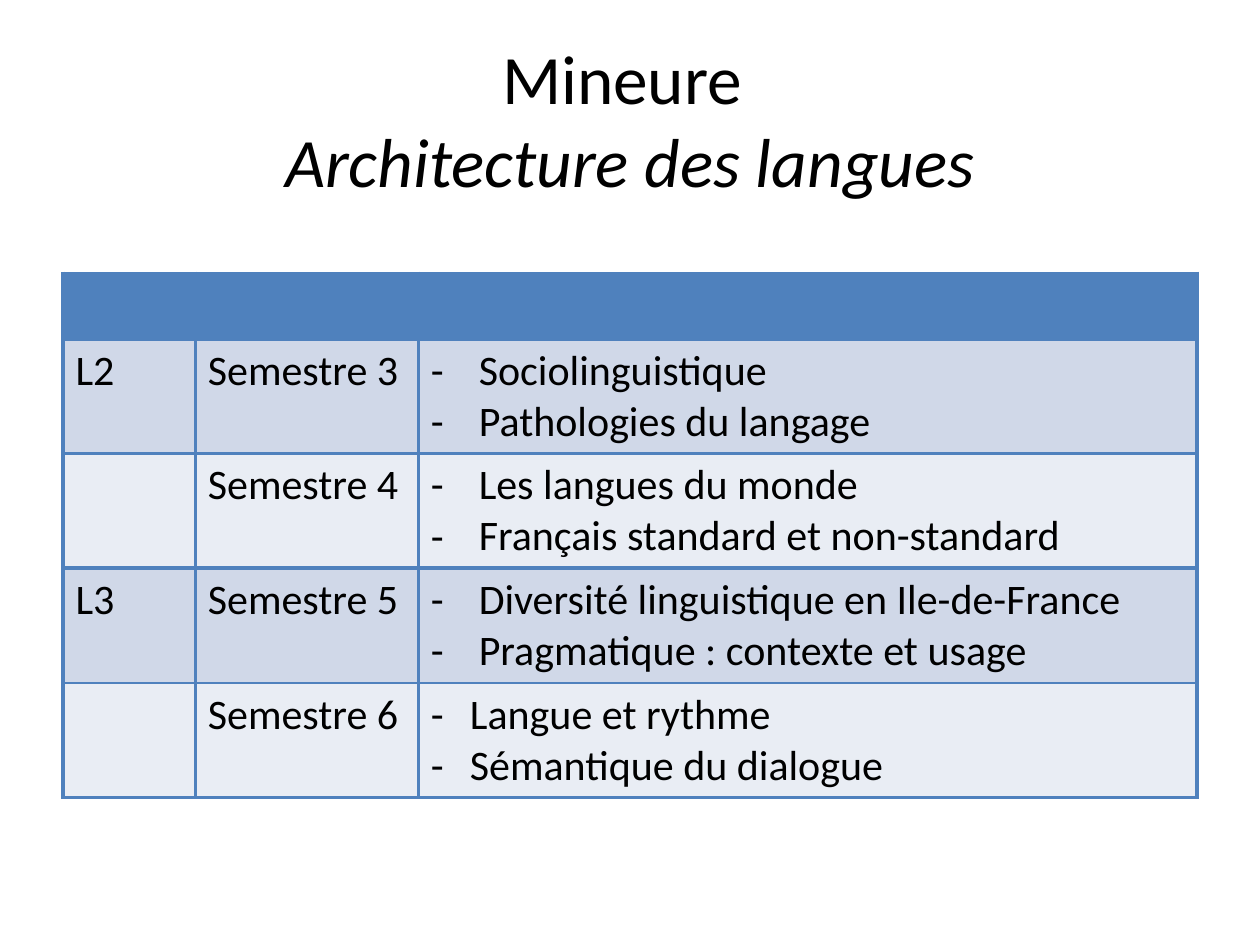
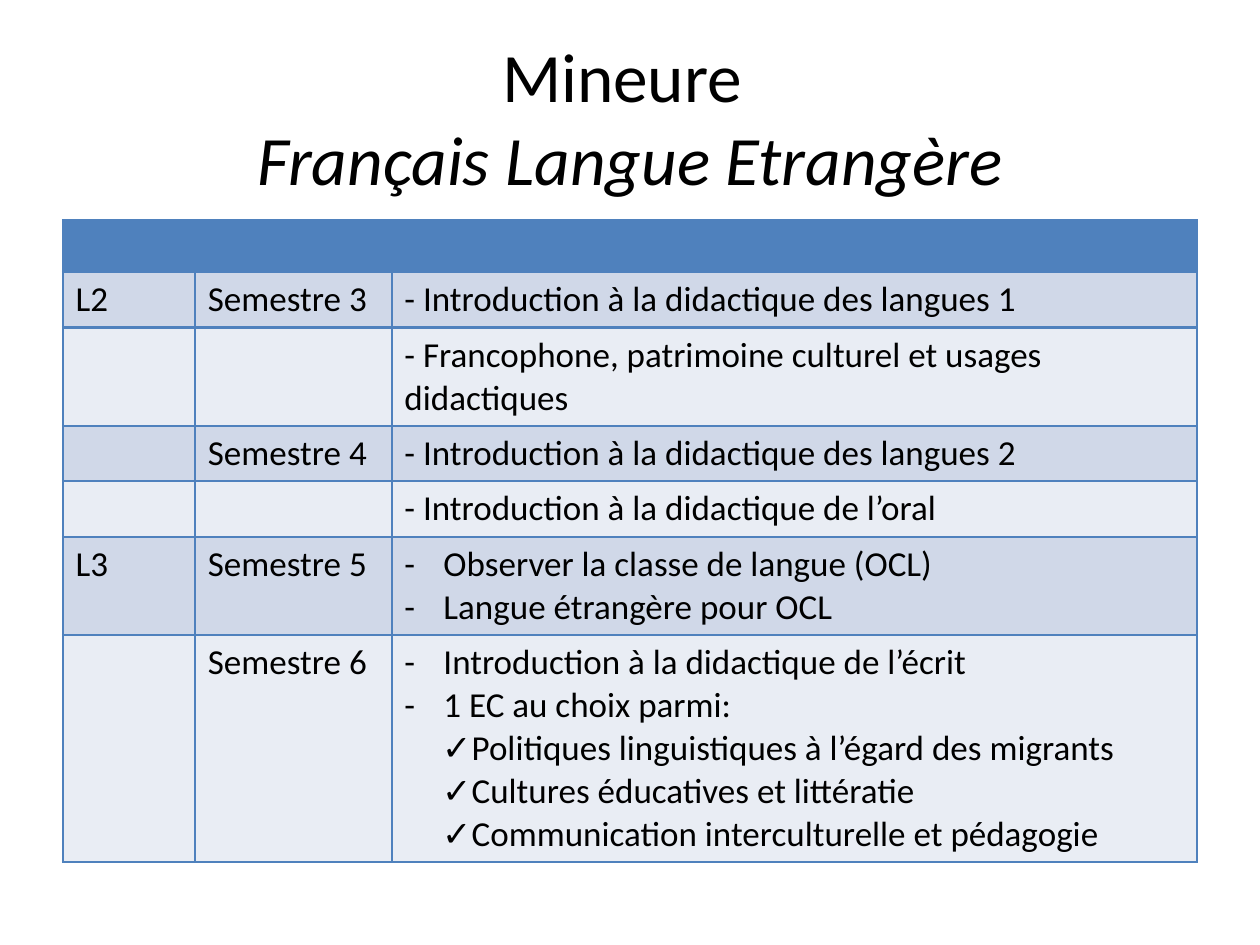
from lxml.etree import SubElement
from pptx import Presentation
from pptx.dml.color import RGBColor as RGB
from pptx.enum.text import MSO_ANCHOR as Anchor, PP_ALIGN as Align
from pptx.oxml.ns import qn
from pptx.util import Inches, Pt

COLORS = {"text": "000000", "header": "4F81BD", "border": "4F81BD",
          "odd": "D0D8E8", "even": "E9EDF4"}
FONT = "Calibri"
GRID_COLS, GRID_ROWS = 100, 75

# Bullet character, left margin and first-line indent in inches
BULLETS = {"wide": ("-", 0.38, -0.38),
           "dash": ("-", 0.31, -0.31),
           "check": ("✓", 0.38, -0.08)}


class Deck:
    def __init__(self):
        self.prs = Presentation()
        self.prs.slide_width, self.prs.slide_height = Inches(10), Inches(7.5)
        self.s = None

    def x(self, cols):
        return int(self.prs.slide_width * cols / GRID_COLS)

    def y(self, rows):
        return int(self.prs.slide_height * rows / GRID_ROWS)

    def new_slide(self):
        self.s = self.prs.slides.add_slide(self.prs.slide_layouts[6])

    def run(self, p, text, size, italic=False):
        r = p.add_run()
        r.text = text
        style = {"name": FONT, "size": Pt(size), "italic": italic}
        for key, value in style.items():
            setattr(r.font, key, value)
        r.font.color.rgb = RGB.from_string(COLORS["text"])

    def title(self, top, height, subject):
        sp = self.s.shapes.add_textbox(self.x(5), self.y(top), self.x(90), self.y(height))
        tf = sp.text_frame
        tf.word_wrap, tf.vertical_anchor = True, Anchor.MIDDLE
        p = tf.paragraphs[0]
        p.alignment = Align.CENTER
        self.run(p, "Mineure ", 39.6)
        p.add_line_break()
        self.run(p, subject, 39.6, italic=True)

    def bullet(self, p, kind):
        char, margin, indent = BULLETS[kind]
        pPr = p._p.get_or_add_pPr()
        pPr.set("marL", str(Inches(margin)))
        pPr.set("indent", str(Inches(indent)))
        SubElement(pPr, qn("a:buFont"), typeface=FONT)
        SubElement(pPr, qn("a:buChar"), char=char)

    def borders(self, cell, widths):
        tcPr = cell._tc.get_or_add_tcPr()
        for side, width in zip("LRTB", widths):
            ln = SubElement(tcPr, qn(f"a:ln{side}"), w=str(Pt(width)))
            fill = SubElement(ln, qn("a:solidFill"))
            SubElement(fill, qn("a:srgbClr"), val=COLORS["border"])

    def cell(self, cell, content, size, color, widths):
        self.borders(cell, widths)
        cell.fill.solid()
        cell.fill.fore_color.rgb = RGB.from_string(COLORS[color])
        kind, *lines = content if isinstance(content, list) else [(None, content)]
        items = [kind, *lines]
        tf = cell.text_frame
        for i, (kind, text) in enumerate(items):
            p = tf.paragraphs[0] if i == 0 else tf.add_paragraph()
            if kind:
                self.bullet(p, kind)
            if text:
                self.run(p, text, size)

    def table(self, top, cols, heights, rows, size, thick, thin):
        """Frame lines are thick; the line below each odd row is thin."""
        rows = [("", "", "")] + rows
        frame = self.s.shapes.add_table(len(rows), len(cols), self.x(5), self.y(top),
                                        self.x(sum(cols)), self.y(sum(heights)))
        tbl = frame.table
        tbl.first_row = tbl.horz_banding = False
        for col, width in zip(tbl.columns, cols):
            col.width = self.x(width)
        for i, (row, height) in enumerate(zip(rows, heights)):
            tbl.rows[i].height = self.y(height)
            odd, last = i % 2 == 1, i == len(rows) - 1
            color = "header" if i == 0 else "odd" if odd else "even"
            above = thin if i and not odd else thick
            below = thin if odd or last else thick
            for j, content in enumerate(row):
                self.cell(tbl.cell(i, j), content, size, color,
                          (thick, thick, above, below))


def items(kind, *texts):
    return [(kind, text) for text in texts]


def main():
    deck = Deck()

    # Language architecture
    deck.new_slide()
    deck.title(3.3, 12.2, "Architecture des langues")
    deck.table(21.7, (10.5, 17.7, 61.8), [5.2] + [9.1] * 4, [
        ("L2", "Semestre 3", items("wide", "Sociolinguistique", "Pathologies du langage")),
        ("", "Semestre 4", items("wide", "Les langues du monde",
                                 "Français standard et non-standard")),
        ("L3", "Semestre 5", items("wide", "Diversité linguistique en Ile-de-France",
                                   "Pragmatique : contexte et usage")),
        ("", "Semestre 6", items("dash", "Langue et rythme", "Sémantique du dialogue")),
    ], size=24, thick=2.25, thin=1.5)

    # French as a foreign language
    deck.new_slide()
    deck.title(3, 12.5, "Français Langue Etrangère")
    deck.table(17.5, (10.5, 15.6, 63.9), (4.1, 4.4, 7.8, 4.4, 4.4, 7.8, 18), [
        ("L2", "Semestre 3", "- Introduction à la didactique des langues 1"),
        ("", "", "- Francophone, patrimoine culturel et usages didactiques"),
        ("", "Semestre 4", "- Introduction à la didactique des langues 2"),
        ("", "", "- Introduction à la didactique de l’oral"),
        ("L3", "Semestre 5", items("dash", "Observer la classe de langue (OCL)",
                                   "Langue étrangère pour OCL")),
        ("", "Semestre 6",
         items("dash", "Introduction à la didactique de l’écrit", "1 EC au choix parmi:")
         + items("check", "Politiques linguistiques à l’égard des migrants",
                 "Cultures éducatives et littératie",
                 "Communication interculturelle et pédagogie")),
    ], size=20, thick=1.5, thin=1.5)

    deck.prs.save("out.pptx")


if __name__ == "__main__":
    main()
